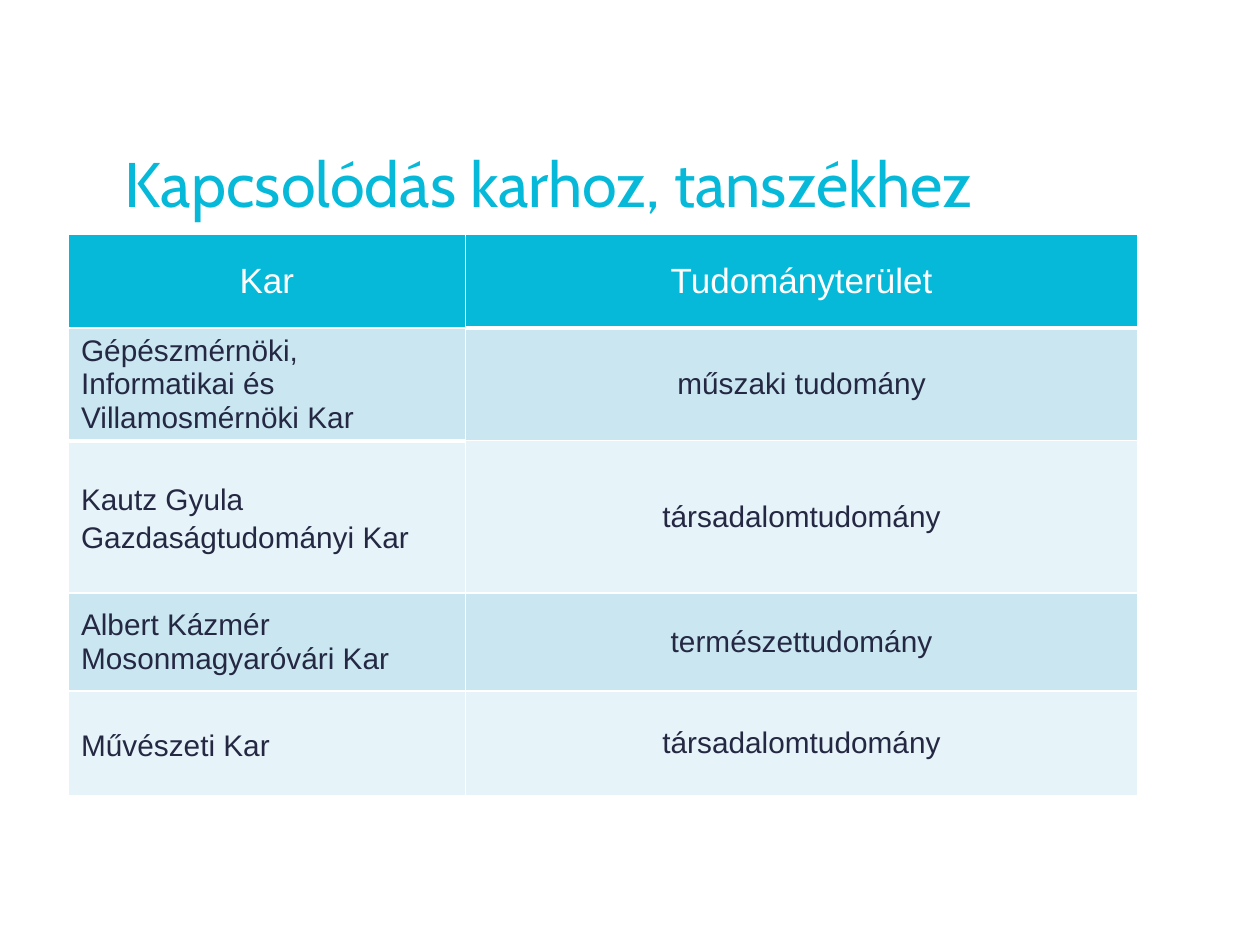
from dataclasses import dataclass

from lxml import etree
from pptx import Presentation
from pptx.dml.color import RGBColor
from pptx.enum import text
from pptx.oxml import ns
from pptx.util import Cm, Pt

COLORS = {
    "accent": "07B9D9",
    "band_dark": "CAE6F1",
    "band_light": "E6F3F8",
    "ink": "242843",
    "white": "FFFFFF",
}
COLUMN_WIDTHS = (8, 13.56)
HEADINGS = ("Kar", "Tudományterület")
THIN, MEDIUM, THICK = 1, 2.5, 3


@dataclass
class Faculty:
    name: str
    field: str
    height: float
    spaced: bool = False


FACULTIES = [
    Faculty("Gépészmérnöki, Informatikai és Villamosmérnöki Kar", "műszaki tudomány", 2.11),
    Faculty("Kautz Gyula Gazdaságtudományi Kar", "társadalomtudomány", 3.07, True),
    Faculty("Albert Kázmér Mosonmagyaróvári Kar", "természettudomány", 1.98),
    Faculty("Művészeti Kar", "társadalomtudomány", 2.11, True),
]
HEADER_HEIGHT = 1.88


def color(name: str) -> RGBColor:
    return RGBColor.from_string(COLORS[name])


def add_borders(cell, top: float = THIN, bottom: float = THIN) -> None:
    """Draw white cell borders; widths are in points."""
    properties = cell._tc.get_or_add_tcPr()
    for side, width in (("L", THIN), ("R", THIN), ("T", top), ("B", bottom)):
        line = etree.SubElement(properties, ns.qn(f"a:ln{side}"), w=str(Pt(width)))
        fill = etree.SubElement(line, ns.qn("a:solidFill"))
        etree.SubElement(fill, ns.qn("a:srgbClr"), val=COLORS["white"])


def fill_cell(cell, words: str, fill: str, ink: str, size: float,
              centred: bool = True, spaced: bool = False) -> None:
    cell.text = words
    cell.vertical_anchor = text.MSO_ANCHOR.MIDDLE
    cell.fill.solid()
    cell.fill.fore_color.rgb = color(fill)
    paragraph = cell.text_frame.paragraphs[0]
    paragraph.alignment = text.PP_ALIGN.CENTER if centred else text.PP_ALIGN.LEFT
    if spaced:
        paragraph.line_spacing = 1.15
        paragraph.space_before = Pt(12)
    font = paragraph.font
    font.name, font.size, font.bold = "Arial", Pt(size), False
    font.color.rgb = color(ink)


def add_title(slide, words: str) -> None:
    title = slide.shapes.title
    title.left, title.top, title.width, title.height = Cm(2.26), Cm(2.95), Cm(21.23), Cm(1.78)
    title.text = words
    frame = title.text_frame
    frame.vertical_anchor = text.MSO_ANCHOR.TOP
    frame.auto_size = text.MSO_AUTO_SIZE.NONE
    paragraph = frame.paragraphs[0]
    paragraph.alignment = text.PP_ALIGN.LEFT
    paragraph.line_spacing = 0.9
    paragraph.font.name, paragraph.font.size = "Cabin", Pt(36)
    paragraph.font.color.rgb = color("accent")


def add_faculty_table(slide) -> None:
    heights = [HEADER_HEIGHT] + [faculty.height for faculty in FACULTIES]
    table = slide.shapes.add_table(
        len(heights), len(COLUMN_WIDTHS), Cm(1.38), Cm(4.73),
        Cm(sum(COLUMN_WIDTHS)), Cm(sum(heights))).table
    for column, width in zip(table.columns, COLUMN_WIDTHS):
        column.width = Cm(width)
    for row, height in zip(table.rows, heights):
        row.height = Cm(height)

    # Borders: a heavier rule under the second heading and the first faculty
    rules = {(0, 1): THICK, (1, 0): MEDIUM}
    for r in range(len(heights)):
        for c in range(len(COLUMN_WIDTHS)):
            add_borders(table.cell(r, c), rules.get((r - 1, c), THIN), rules.get((r, c), THIN))

    # Heading row
    for c, heading in enumerate(HEADINGS):
        fill_cell(table.cell(0, c), heading, "accent", "white", 20)

    # Faculty rows
    for r, faculty in enumerate(FACULTIES, start=1):
        band = "band_dark" if r % 2 else "band_light"
        fill_cell(table.cell(r, 0), faculty.name, band, "ink", 17, False, faculty.spaced)
        fill_cell(table.cell(r, 1), faculty.field, band, "ink", 17)


def main() -> None:
    deck = Presentation()
    deck.slide_width, deck.slide_height = Cm(25.4), Cm(19.05)
    slide = deck.slides.add_slide(deck.slide_layouts.get_by_name("Title Only"))
    add_faculty_table(slide)
    add_title(slide, "Kapcsolódás karhoz, tanszékhez")
    deck.save("out.pptx")


if __name__ == "__main__":
    main()
